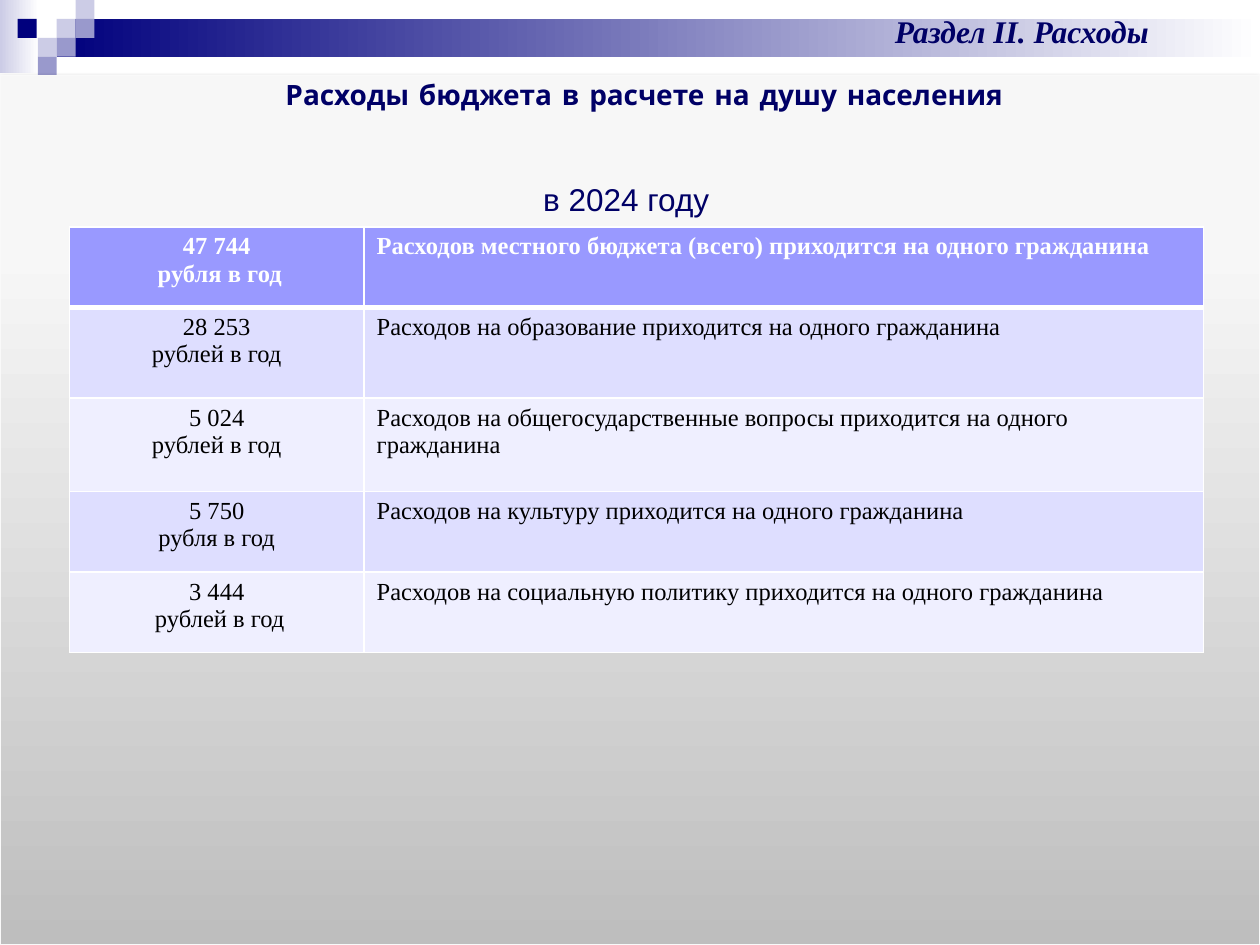
from dataclasses import dataclass
from typing import NamedTuple

from lxml.etree import SubElement
from pptx import Presentation
from pptx.dml.color import RGBColor
from pptx.enum.shapes import MSO_SHAPE
from pptx.enum.text import MSO_ANCHOR, PP_ALIGN
from pptx.oxml import parse_xml
from pptx.oxml.ns import nsdecls, qn
from pptx.util import Inches, Pt


@dataclass(frozen=True)
class Theme:
    navy: str = "00007D"
    heading: str = "000066"
    pale: str = "CCCCE6"
    medium: str = "9999CC"
    white: str = "FFFFFF"
    black: str = "000000"
    panel_line: str = "F9F9F9"
    header_fill: str = "9999FF"
    bands: tuple = ("DEDEFF", "EFEFFF")
    serif: str = "Times New Roman"
    sans: str = "Arial"
    comic: str = "Comic Neue"
    title_size: int = 18
    subtitle_size: int = 16
    table_size: int = 14


THEME = Theme()


class Box(NamedTuple):
    left: float
    top: float
    width: float
    height: float

    def lengths(self) -> list:
        return [Inches(value) for value in self]


class Style(NamedTuple):
    font: str
    size: int
    color: str
    bold: bool = False
    italic: bool = False


class Square(NamedTuple):
    left: float
    top: float
    color: str


class Expense(NamedTuple):
    amount: str
    unit: str
    purpose: str
    height: float


SQUARE_SIDE = 0.15
SQUARES = [
    Square(0.45, 0.15, THEME.pale),
    Square(0.6, 0, THEME.pale),
    Square(0.6, 0.15, THEME.medium),
    Square(0.3, 0.3, THEME.pale),
    Square(0.14, 0.15, THEME.navy),
    Square(0.45, 0.3, THEME.medium),
    Square(0.3, 0.45, THEME.medium),
]
EXPENSES = [
    Expense("47 744", " рубля в год",
            "Расходов местного бюджета (всего) приходится на одного гражданина", 0.64),
    Expense("28 253", "рублей в год",
            "Расходов на образование приходится на одного гражданина", 0.72),
    Expense("5 024", "рублей в год",
            "Расходов на общегосударственные вопросы приходится на одного гражданина", 0.74),
    Expense("5 750", "рубля в год",
            "Расходов на культуру приходится на одного гражданина", 0.64),
    Expense("3 444", " рублей в год",
            "Расходов на социальную политику приходится на одного гражданина", 0.64),
]
COLUMN_WIDTHS = (2.34, 6.66)


def add_plain_shape(slide, kind: MSO_SHAPE, box: Box):
    shape = slide.shapes.add_shape(kind, *box.lengths())
    shape.shadow.inherit = False
    shape.line.fill.background()
    return shape


def fill_gradient(shape, stops: list[tuple[int, str]], angle: int) -> None:
    """Fill with stops given in percent, at a clockwise angle in degrees."""
    shape.fill.gradient()
    gradient = shape.fill._xPr.find(qn("a:gradFill"))
    stop_list = gradient.find(qn("a:gsLst"))
    for old in list(stop_list):
        stop_list.remove(old)
    for position, color in stops:
        stop = SubElement(stop_list, qn("a:gs"), pos=str(position * 1000))
        SubElement(stop, qn("a:srgbClr"), val=color)
    gradient.find(qn("a:lin")).set("ang", str(angle * 60000))


def add_soft_shadow(shape) -> None:
    effects = shape._element.spPr.find(qn("a:effectLst"))
    shadow = SubElement(effects, qn("a:outerShdw"), blurRad=str(Pt(3.1)),
                        dist=str(Pt(1.8)), dir="5400000", rotWithShape="0")
    color = SubElement(shadow, qn("a:srgbClr"), val=THEME.black)
    SubElement(color, qn("a:alpha"), val="35000")


def write_lines(frame, lines: list[str], style: Style, align: PP_ALIGN) -> None:
    for index, line in enumerate(lines):
        paragraph = frame.add_paragraph() if index else frame.paragraphs[0]
        paragraph.alignment = align
        run = paragraph.add_run()
        run.text = line
        font = run.font
        font.name, font.size = style.font, Pt(style.size)
        font.bold, font.italic = style.bold, style.italic
        font.color.rgb = RGBColor.from_string(style.color)


def add_label(slide, box: Box, text: str, style: Style) -> None:
    frame = slide.shapes.add_textbox(*box.lengths()).text_frame
    frame.word_wrap = True
    write_lines(frame, [text], style, PP_ALIGN.CENTER)


def draw_background(slide) -> None:
    bands = [(Box(0, 0, 0.31, 0.58), THEME.pale), (Box(0.45, 0.15, 9.55, 0.3), THEME.navy)]
    for box, color in bands:
        band = add_plain_shape(slide, MSO_SHAPE.RECTANGLE, box)
        fill_gradient(band, [(0, color), (100, THEME.white)], 0)
    for square in SQUARES:
        box = Box(square.left, square.top, SQUARE_SIDE, SQUARE_SIDE)
        tile = add_plain_shape(slide, MSO_SHAPE.RECTANGLE, box)
        tile.fill.solid()
        tile.fill.fore_color.rgb = RGBColor.from_string(square.color)
    panel = add_plain_shape(slide, MSO_SHAPE.FLOWCHART_PROCESS, Box(0, 0.6, 10, 6.9))
    fill_gradient(panel, [(0, "BEBEBE"), (80, "F7F7F7"), (100, "F8F8F8")], 270)
    panel.line.color.rgb = RGBColor.from_string(THEME.panel_line)
    panel.line.width = Pt(0.75)
    add_soft_shadow(panel)


def place_title(slide, text: str) -> None:
    title = slide.shapes.title
    title.left, title.top, title.width, title.height = Box(-0.03, 1.31, 10, 0.54).lengths()
    title.text_frame.vertical_anchor = MSO_ANCHOR.MIDDLE
    style = Style(THEME.sans, THEME.title_size, THEME.heading)
    write_lines(title.text_frame, [text], style, PP_ALIGN.CENTER)
    slide.shapes._spTree.append(title._element)  # bring in front of the panel


def format_cell(cell, fill: str, bottom_width: int) -> None:
    cell.fill.solid()
    cell.fill.fore_color.rgb = RGBColor.from_string(fill)
    properties = cell._tc.get_or_add_tcPr()
    for index, side in enumerate("LRTB"):
        width = Pt(bottom_width if side == "B" else 1)
        properties.insert(index, parse_xml(
            f'<a:ln{side} {nsdecls("a")} w="{width}"><a:solidFill>'
            f'<a:srgbClr val="{THEME.white}"/></a:solidFill></a:ln{side}>'))


def add_expense_table(slide) -> None:
    box = Box(0.55, 1.8, sum(COLUMN_WIDTHS), sum(row.height for row in EXPENSES))
    table = slide.shapes.add_table(len(EXPENSES), len(COLUMN_WIDTHS), *box.lengths()).table
    for column, width in zip(table.columns, COLUMN_WIDTHS):
        column.width = Inches(width)
    for index, expense in enumerate(EXPENSES):
        is_header = index == 0
        table.rows[index].height = Inches(expense.height)
        fill = THEME.header_fill if is_header else THEME.bands[(index - 1) % 2]
        color = THEME.white if is_header else THEME.black
        style = Style(THEME.serif, THEME.table_size, color, bold=is_header)
        amount, purpose = table.rows[index].cells
        for cell in (amount, purpose):
            format_cell(cell, fill, 3 if is_header else 1)
        write_lines(amount.text_frame, [expense.amount, expense.unit], style, PP_ALIGN.CENTER)
        write_lines(purpose.text_frame, [expense.purpose], style, PP_ALIGN.LEFT)


def main() -> None:
    presentation = Presentation()
    presentation.slide_width, presentation.slide_height = Inches(10), Inches(7.5)
    slide = presentation.slides.add_slide(presentation.slide_layouts.get_by_name("Title Only"))
    draw_background(slide)
    place_title(slide, "в 2024 году")
    add_expense_table(slide)
    add_label(slide, Box(6.26, 0.05, 3.7, 0.4), "Раздел II. Расходы",
              Style(THEME.serif, THEME.title_size, THEME.heading, bold=True, italic=True))
    add_label(slide, Box(0.87, 0.57, 8.49, 0.37), "Расходы бюджета в расчете на душу населения",
              Style(THEME.comic, THEME.subtitle_size, THEME.heading, bold=True))
    presentation.save("out.pptx")


if __name__ == "__main__":
    main()
